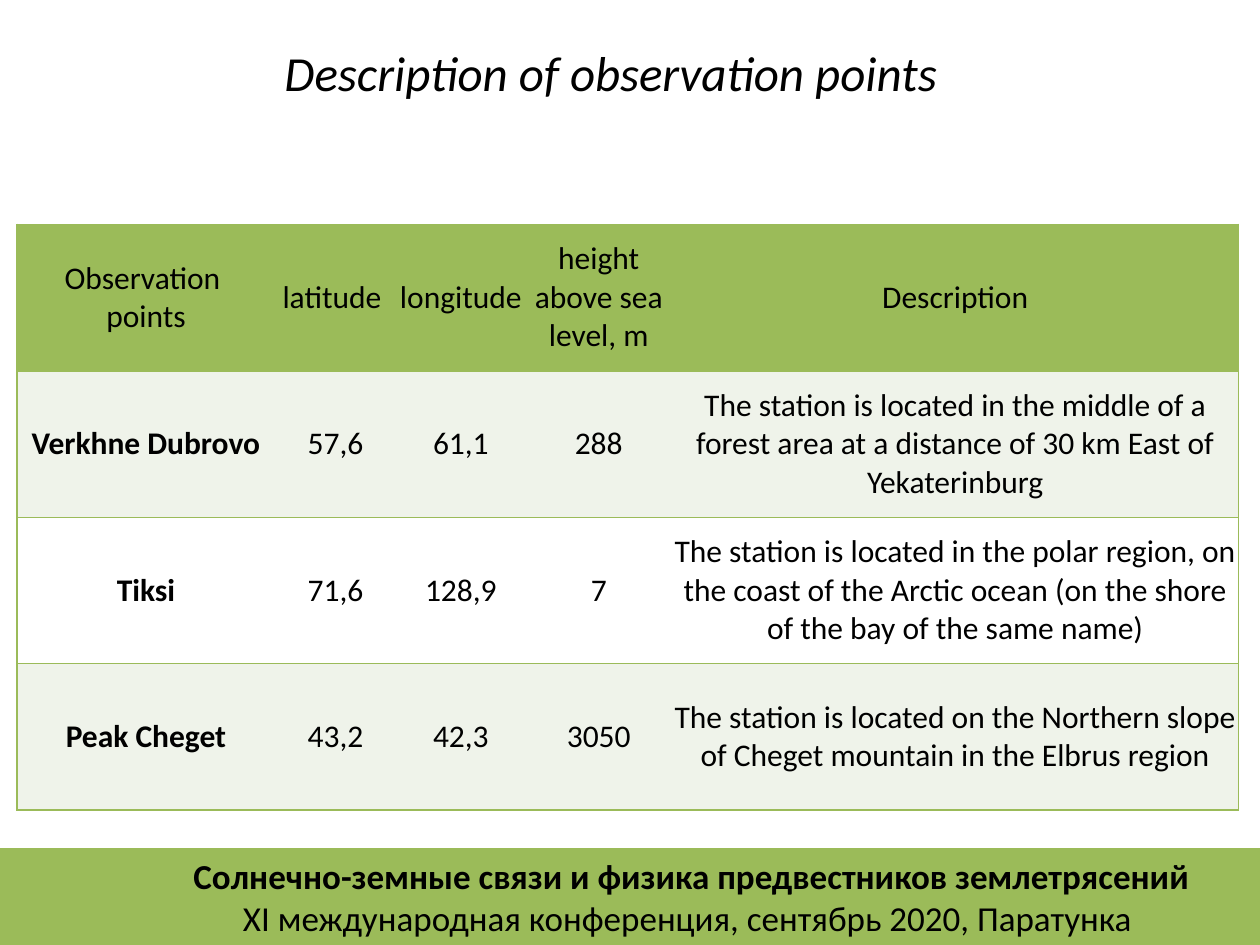
from typing import NamedTuple

from lxml.etree import SubElement
from pptx import Presentation
from pptx.dml.color import RGBColor
from pptx.enum.shapes import MSO_SHAPE
from pptx.enum.text import MSO_ANCHOR, MSO_AUTO_SIZE, PP_ALIGN
from pptx.oxml import parse_xml
from pptx.oxml.ns import nsdecls, qn
from pptx.util import Pt

GREEN = RGBColor(0x9B, 0xBB, 0x59)
PALE = RGBColor(0xEF, 0xF3, 0xEA)
WHITE = RGBColor(0xFF, 0xFF, 0xFF)
BLACK = RGBColor(0, 0, 0)

WIDTH, HEIGHT = 720, 540
FOOTER_TOP = 484.6
COLUMN_WIDTHS = (147.5, 69.1, 74.2, 83.4, 324)
ROW_HEIGHT = 83.7


class Station(NamedTuple):
    name: str
    latitude: str
    longitude: str
    height: str
    description: str


HEADER = Station("Observation \vpoints", "latitude ", "longitude",
                 "height above sea level, m", "Description")
STATIONS = (
    Station("Verkhne Dubrovo", "57,6", "61,1", "288",
            "The station is located in the middle of a forest area "
            "at a distance of 30 km East of Yekaterinburg"),
    Station("Tiksi", "71,6", "128,9", "7",
            "The station is located in the polar region, on the coast of the "
            "Arctic ocean (on the shore of the bay of the same name)"),
    Station("Peak Cheget", "43,2", "42,3", "3050",
            "The station is located on the Northern slope of Cheget mountain "
            "in the Elbrus region"),
)


def write(p, text: str, *, size: float, bold: bool = False,
          italic: bool = False, align=PP_ALIGN.CENTER) -> None:
    p.text = text
    p.alignment = align
    for r in p.runs:
        r.font.name = "Calibri"
        r.font.size = Pt(size)
        r.font.bold = bold
        r.font.italic = italic
        r.font.color.rgb = BLACK


def add_text_box(s, left: float, top: float, width: float, height: float,
                 wrap: bool):
    tf = s.shapes.add_textbox(Pt(left), Pt(top), Pt(width), Pt(height)).text_frame
    tf.word_wrap = wrap
    tf.auto_size = MSO_AUTO_SIZE.SHAPE_TO_FIT_TEXT
    return tf


def set_borders(cell, drawn: str) -> None:
    """Draw the sides named in drawn (of L, R, T, B) and clear the others."""
    tc_pr = cell._tc.get_or_add_tcPr()
    for i, side in enumerate("LRTB"):
        line = parse_xml(f'<a:ln{side} {nsdecls("a")} w="{Pt(1)}"/>')
        if side in drawn:
            fill = SubElement(line, qn("a:solidFill"))
            SubElement(fill, qn("a:srgbClr"), val=str(GREEN))
        else:
            SubElement(line, qn("a:noFill"))
        tc_pr.insert(i, line)


def fill_row(table, row: int, station: Station, color: RGBColor) -> None:
    last = len(station) - 1
    for col, text in enumerate(station):
        cell = table.cell(row, col)
        cell.margin_left = cell.margin_right = Pt(0.7)
        cell.margin_top = cell.margin_bottom = Pt(0)
        cell.vertical_anchor = MSO_ANCHOR.MIDDLE
        cell.fill.solid()
        cell.fill.fore_color.rgb = color
        set_borders(cell, "TB" + {0: "L", last: "R"}.get(col, ""))
        write(cell.text_frame.paragraphs[0], text, size=18,
              bold=row > 0 and col == 0)


def add_station_table(s) -> None:
    rows = (HEADER, *STATIONS)
    table = s.shapes.add_table(
        len(rows), len(COLUMN_WIDTHS), Pt(9.7), Pt(128.2),
        Pt(sum(COLUMN_WIDTHS)), Pt(ROW_HEIGHT * len(rows))).table
    for column, width in zip(table.columns, COLUMN_WIDTHS):
        column.width = Pt(width)
    for i, station in enumerate(rows):
        table.rows[i].height = Pt(ROW_HEIGHT)
        fill_row(table, i, station, GREEN if i == 0 else PALE if i % 2 else WHITE)


def add_footer(s) -> None:
    height = HEIGHT - FOOTER_TOP
    band = s.shapes.add_shape(MSO_SHAPE.RECTANGLE, Pt(0), Pt(FOOTER_TOP),
                              Pt(WIDTH), Pt(height))
    band.shadow.inherit = False
    band.fill.solid()
    band.fill.fore_color.rgb = GREEN
    band.line.fill.background()
    tf = add_text_box(s, 82, FOOTER_TOP, 626.4, height, wrap=True)
    write(tf.paragraphs[0],
          "Солнечно-земные связи и физика предвестников землетрясений",
          size=20, bold=True)
    write(tf.add_paragraph(),
          "XI международная конференция, сентябрь 2020, Паратунка ", size=20)


def main() -> None:
    prs = Presentation()
    prs.slide_width, prs.slide_height = Pt(WIDTH), Pt(HEIGHT)
    s = prs.slides.add_slide(prs.slide_layouts[6])
    add_footer(s)
    add_station_table(s)
    title = add_text_box(s, 155.5, 20.9, 405.4, 41, wrap=False)
    write(title.paragraphs[0], "Description of observation points",
          size=28, italic=True, align=PP_ALIGN.LEFT)
    prs.save("out.pptx")


if __name__ == "__main__":
    main()
